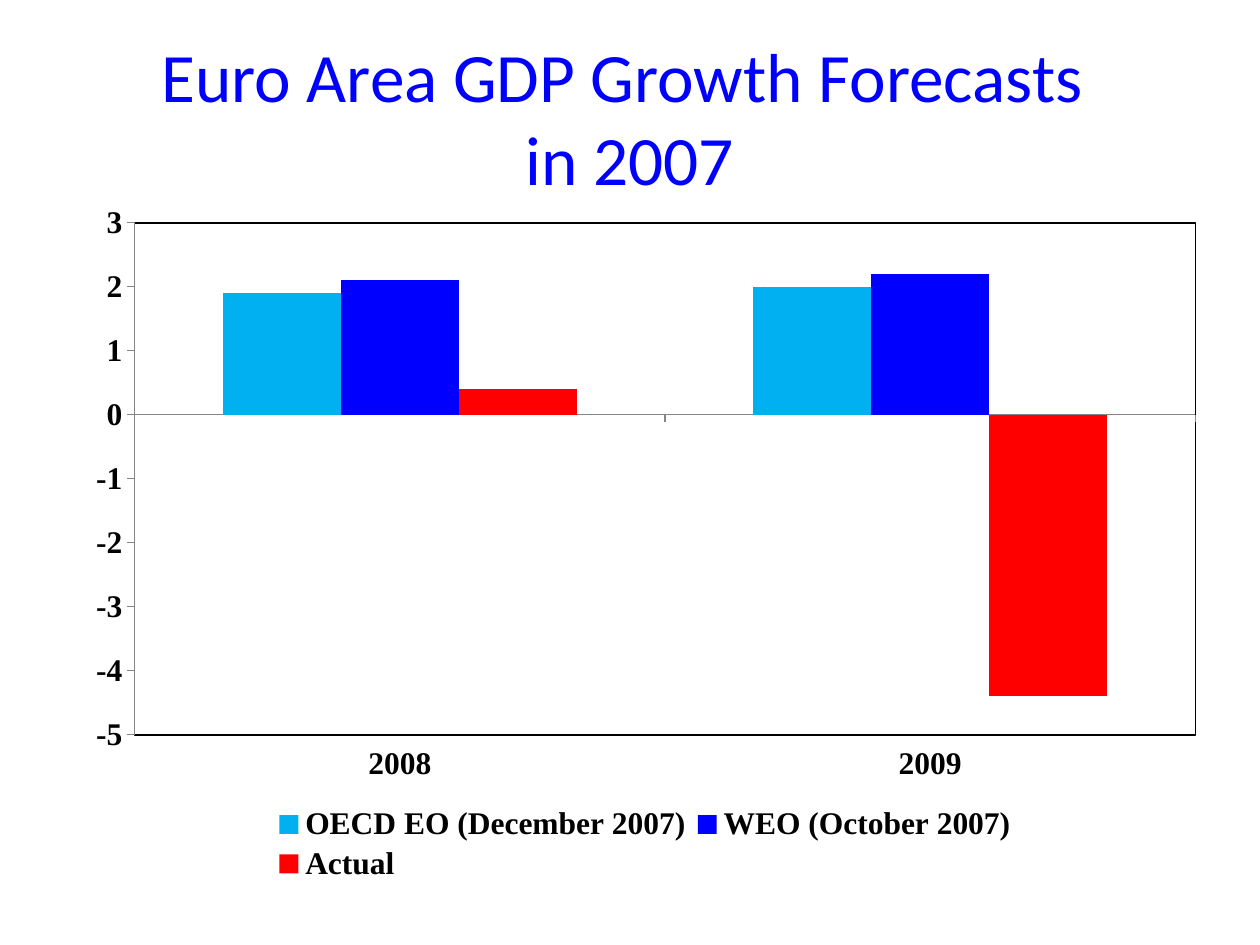
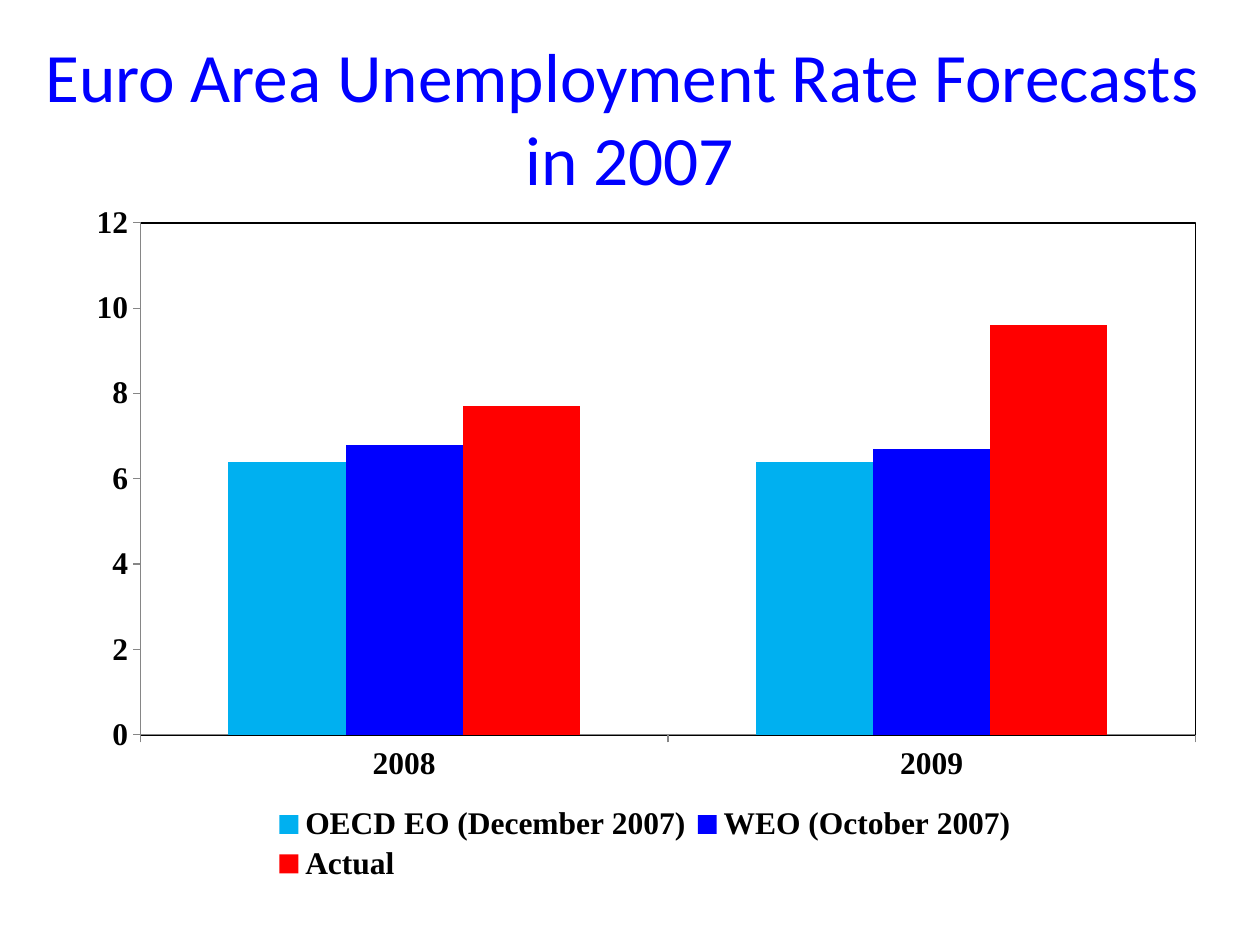
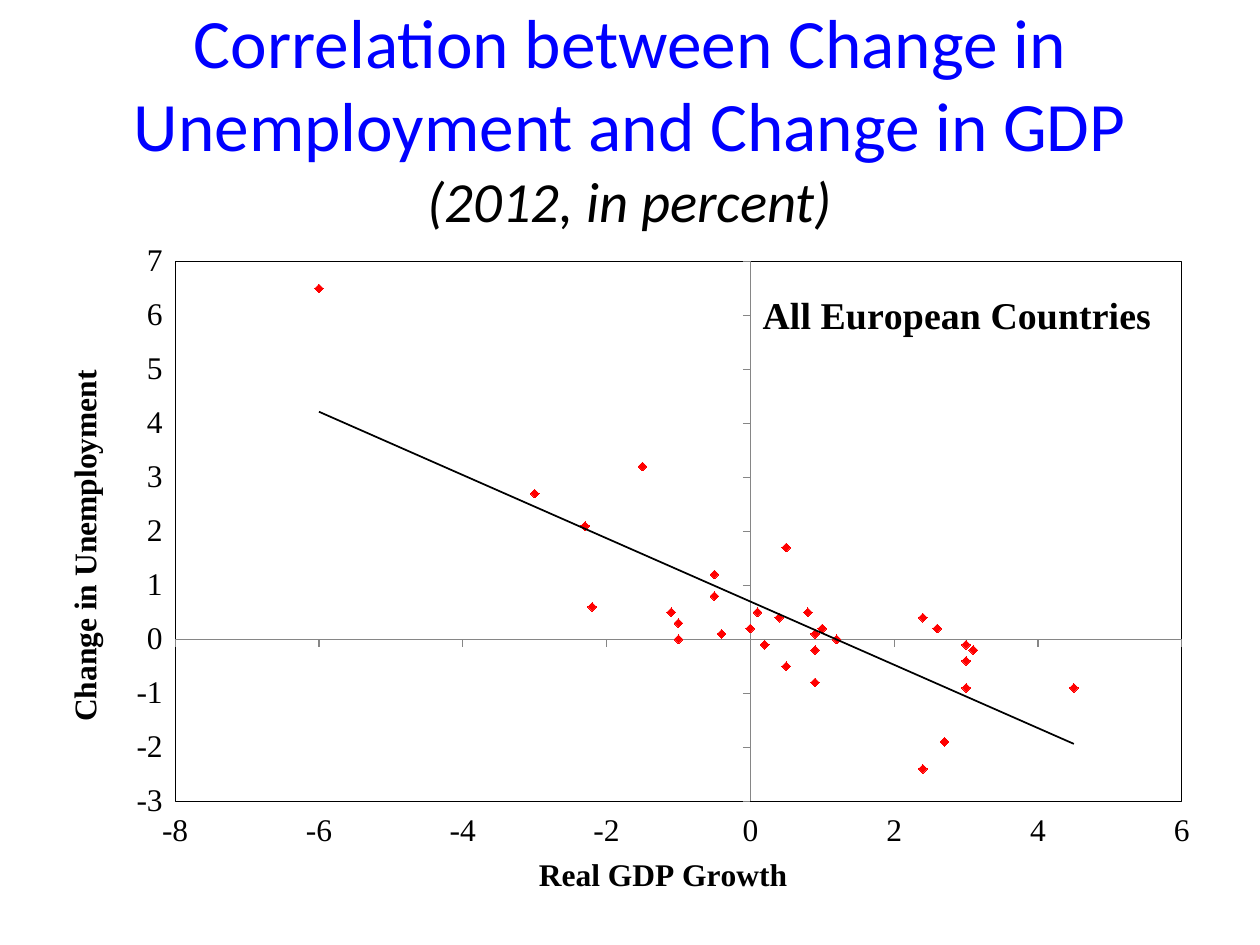
from dataclasses import dataclass

from lxml import etree
from pptx import Presentation
from pptx import util as u
from pptx.chart import data as chart_data
from pptx.chart.chart import Chart
from pptx.dml.color import RGBColor
from pptx.enum import chart as ch
from pptx.enum import text as tx
from pptx.oxml import parse_xml

PX = 9144  # one hundredth of an inch
C_NS = "http://schemas.openxmlformats.org/drawingml/2006/chart"
A_NS = "http://schemas.openxmlformats.org/drawingml/2006/main"
TITLE_FONT, CHART_FONT = "Calibri", "Times New Roman"
BLUE, SKY, RED, BLACK, GRAY = "0000FF", "00B0F0", "FF0000", "000000", "868686"
TITLE_SIZE, SUBTITLE_SIZE, CHART_SIZE, CAPTION_SIZE = 39.6, 32.4, 18, 21.6


@dataclass(frozen=True)
class Box:
    left: int
    top: int
    width: int
    height: int

    def emu(self) -> tuple:
        return tuple(u.Emu(n * PX) for n in (self.left, self.top, self.width, self.height))


@dataclass(frozen=True)
class Line:
    text: str
    size: float = TITLE_SIZE
    color: str = BLUE
    italic: bool = False


@dataclass(frozen=True)
class Scale:
    low: float
    high: float
    step: float


@dataclass(frozen=True)
class Forecast:
    title: str
    title_box: Box
    values: tuple
    scale: Scale
    plot: tuple
    number_format: str


TITLE_BOX = Box(50, 30, 900, 125)
WIDE_TITLE_BOX = Box(0, 30, 1000, 125)
FORECAST_BOX = Box(58, 153, 908, 556)
SCATTER_BOX = Box(25, 183, 958, 533)
LEGEND_AREA = (0.17, 0.87, 0.66, 0.12)
SOURCES = (("OECD EO (December 2007)", SKY), ("WEO (October 2007)", BLUE), ("Actual", RED))
YEARS = ("2008", "2009")

FORECASTS = (
    Forecast("Euro Area GDP Growth Forecasts ", TITLE_BOX,
             ((1.9, 2.0), (2.1, 2.2), (0.4, -4.4)),
             Scale(-5, 3, 1), (0.054, 0.043, 0.927, 0.731), "#,##0"),
    Forecast("Euro Area Unemployment Rate Forecasts ", WIDE_TITLE_BOX,
             ((6.4, 6.4), (6.8, 6.7), (7.7, 9.6)),
             Scale(0, 12, 2), (0.059, 0.043, 0.922, 0.731), "General"),
)

GDP_GROWTH = (0.5, 0.9, 0, 1, -1.1, -1, 0.5, 2.4, 0.2, 0.1, 0.9, -6, -1, 0.4, -2.3, 4.5,
              2.7, 3, -0.5, 3.1, 2.4, -3, 0.9, -0.5, 2.6, -2.2, -1.5, 1.2, 0.8, 3, 3, -0.4)
UNEMPLOYMENT = (1.7, 0.1, 0.2, 0.2, 0.5, 0.3, -0.5, -2.4, -0.1, 0.5, -0.8, 6.5, 0, 0.4, 2.1, -0.9,
                -1.9, -0.9, 0.8, -0.2, 0.4, 2.7, -0.2, 1.2, 0.2, 0.6, 3.2, 0, 0.5, -0.4, -0.1, 0.1)


def rgb(color: str) -> RGBColor:
    return RGBColor.from_string(color)


def style_font(font, name: str, size: float, color: str, bold=False, italic=False) -> None:
    font.name, font.size, font.bold, font.italic = name, u.Pt(size), bold, italic
    font.color.rgb = rgb(color)


def add_title(slide, box: Box, lines: tuple) -> None:
    frame = slide.shapes.add_textbox(*box.emu()).text_frame
    frame.word_wrap = True
    frame.vertical_anchor = tx.MSO_ANCHOR.MIDDLE
    paragraph = frame.paragraphs[0]
    paragraph.alignment = tx.PP_ALIGN.CENTER
    for i, line in enumerate(lines):
        if i:
            paragraph.add_line_break()
        run = paragraph.add_run()
        run.text = line.text
        style_font(run.font, TITLE_FONT, line.size, line.color, italic=line.italic)


def set_layout(parent, index: int, area: tuple, inner=False) -> None:
    """Place a chart part by fractions of the chart: x, y and, if given, width, height."""
    for old in parent.xpath("c:layout"):
        parent.remove(old)
    layout = parse_xml(f'<c:layout xmlns:c="{C_NS}"><c:manualLayout/></c:layout>')
    parent.insert(index, layout)
    settings = [("layoutTarget", "inner")] if inner else []
    settings += [("xMode", "edge"), ("yMode", "edge"), *zip("xywh", area)]
    for tag, value in settings:
        etree.SubElement(layout[0], f"{{{C_NS}}}{tag}").set("val", str(value))


def style_plot(chart: Chart, area: tuple) -> None:
    plot_area = chart.element.xpath("c:chart/c:plotArea")[0]
    set_layout(plot_area, 0, area, inner=True)
    plot_area.append(parse_xml(
        f'<c:spPr xmlns:c="{C_NS}" xmlns:a="{A_NS}"><a:noFill/><a:ln w="9525">'
        f'<a:solidFill><a:srgbClr val="{BLACK}"/></a:solidFill></a:ln></c:spPr>'))


def style_axis(axis, scale: Scale | None = None, number_format="General") -> None:
    axis.has_major_gridlines = False
    axis.major_tick_mark = ch.XL_TICK_MARK.OUTSIDE
    axis.minor_tick_mark = ch.XL_TICK_MARK.NONE
    axis.tick_label_position = ch.XL_TICK_LABEL_POSITION.LOW
    axis.format.line.color.rgb = rgb(GRAY)
    axis.format.line.width = u.Pt(0.75)
    if scale:
        axis.minimum_scale, axis.maximum_scale = scale.low, scale.high
        axis.major_unit = scale.step
        axis.tick_labels.number_format = number_format
        axis.tick_labels.number_format_is_linked = False


def add_chart(slide, kind, box: Box, data, bold: bool) -> Chart:
    chart = slide.shapes.add_chart(kind, *box.emu(), data).chart
    style_font(chart.font, CHART_FONT, CHART_SIZE, BLACK, bold)
    chart.has_title = False
    chart.has_legend = False
    chart.plots[0].vary_by_categories = False
    return chart


def add_caption(title, text: str, size: float = CHART_SIZE) -> None:
    run = title.text_frame.paragraphs[0].add_run()
    run.text = text
    style_font(run.font, CHART_FONT, size, BLACK, bold=True)


def add_forecast_chart(slide, forecast: Forecast) -> None:
    data = chart_data.CategoryChartData()
    data.categories = YEARS
    for (source, _), values in zip(SOURCES, forecast.values):
        data.add_series(source, values)
    chart = add_chart(slide, ch.XL_CHART_TYPE.COLUMN_CLUSTERED, FORECAST_BOX, data, bold=True)
    style_plot(chart, forecast.plot)
    style_axis(chart.category_axis)
    style_axis(chart.value_axis, forecast.scale, forecast.number_format)
    chart.plots[0].gap_width = 150
    chart.plots[0].overlap = 0
    for series, (_, color) in zip(chart.plots[0].series, SOURCES):
        series.invert_if_negative = False
        series.format.fill.solid()
        series.format.fill.fore_color.rgb = rgb(color)
    chart.has_legend = True
    chart.legend.position = ch.XL_LEGEND_POSITION.BOTTOM
    chart.legend.include_in_layout = False
    set_layout(chart.legend._element, 1, LEGEND_AREA)


def add_trend_line(series) -> None:
    series._element.xpath("c:marker")[0].addnext(parse_xml(
        f'<c:trendline xmlns:c="{C_NS}" xmlns:a="{A_NS}"><c:spPr><a:ln w="12700"><a:solidFill>'
        f'<a:srgbClr val="{BLACK}"/></a:solidFill></a:ln></c:spPr><c:trendlineType val="linear"/>'
        '<c:dispRSqr val="0"/><c:dispEq val="0"/></c:trendline>'))


def add_correlation_chart(slide) -> None:
    data = chart_data.XyChartData()
    countries = data.add_series("Series 1")
    for growth, change in zip(GDP_GROWTH, UNEMPLOYMENT):
        countries.add_data_point(growth, change)
    chart = add_chart(slide, ch.XL_CHART_TYPE.XY_SCATTER, SCATTER_BOX, data, bold=False)
    style_plot(chart, (0.119, 0.046, 0.834, 0.804))

    growth_axis, change_axis = chart.category_axis, chart.value_axis
    style_axis(growth_axis, Scale(-8, 6, 2))
    style_axis(change_axis, Scale(-3, 7, 1))
    add_caption(growth_axis.axis_title, "Real GDP Growth")
    add_caption(change_axis.axis_title, "Change in Unemployment")
    change_axis.axis_title._element.xpath(".//a:bodyPr")[0].set("rot", "-5400000")

    chart.has_title = True
    add_caption(chart.chart_title, "All European Countries", CAPTION_SIZE)
    heading = chart.chart_title._element
    set_layout(heading, 1, (0.6, 0.08))
    heading.xpath("c:overlay")[0].set("val", "1")

    series = chart.plots[0].series[0]
    series.smooth = False
    series.format.line.fill.background()
    series.marker.style = ch.XL_MARKER_STYLE.DIAMOND
    series.marker.size = 5
    series.marker.format.fill.solid()
    series.marker.format.fill.fore_color.rgb = rgb(RED)
    series.marker.format.line.color.rgb = rgb(RED)
    add_trend_line(series)


def main() -> None:
    deck = Presentation()
    deck.slide_width, deck.slide_height = u.Emu(1000 * PX), u.Emu(750 * PX)
    blank = deck.slide_layouts[6]
    for forecast in FORECASTS:
        slide = deck.slides.add_slide(blank)
        add_title(slide, forecast.title_box, (Line(forecast.title), Line("in 2007")))
        add_forecast_chart(slide, forecast)
    slide = deck.slides.add_slide(blank)
    add_title(slide, TITLE_BOX, (
        Line("Correlation between Change in Unemployment and Change in GDP"),
        Line("(2012, in percent)", SUBTITLE_SIZE, BLACK, italic=True)))
    add_correlation_chart(slide)
    deck.save("out.pptx")


if __name__ == "__main__":
    main()
